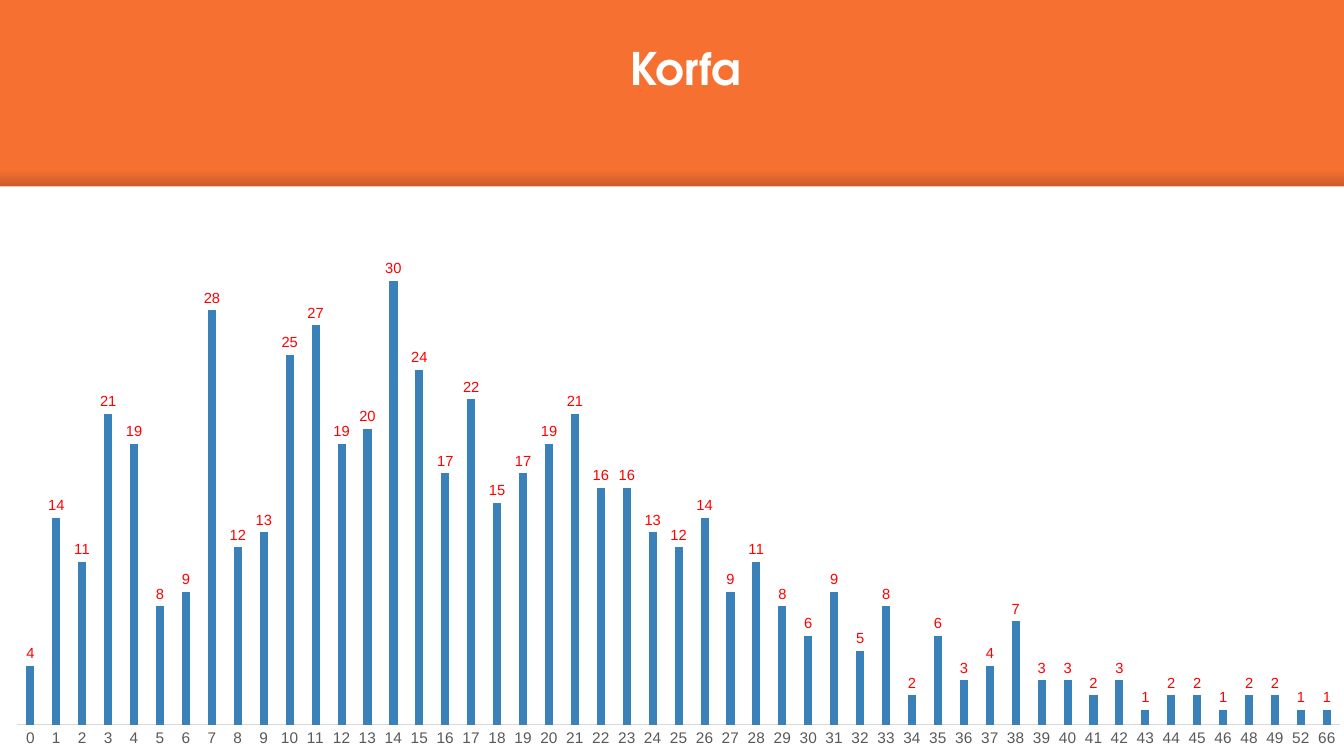
from lxml.etree import SubElement
from pptx import Presentation
from pptx.chart.data import CategoryChartData
from pptx.dml.color import RGBColor
from pptx.enum.chart import XL_CHART_TYPE as ChartType
from pptx.enum.chart import XL_LABEL_POSITION as LabelPosition
from pptx.enum.chart import XL_TICK_MARK as TickMark
from pptx.enum.shapes import MSO_SHAPE as Shape
from pptx.enum.text import MSO_ANCHOR as Anchor
from pptx.enum.text import PP_ALIGN as Align
from pptx.oxml import parse_xml
from pptx.oxml.ns import nsdecls, qn
from pptx.util import Inches, Pt

COLORS = {
    "orange": "F67031",
    "white": "FFFFFF",
    "shade": "000014",
    "bar": "3A81BA",
    "value": "FF0000",
    "category": "595959",
    "axis": "D9D9D9",
}
SCORES = [*range(47), 48, 49, 52, 66]
COUNTS = [
    4, 14, 11, 21, 19, 8, 9, 28, 12, 13, 25, 27, 19, 20, 30, 24, 17,
    22, 15, 17, 19, 21, 16, 16, 13, 12, 14, 9, 11, 8, 6, 9, 5, 8,
    2, 6, 3, 4, 7, 3, 3, 2, 3, 1, 2, 2, 1, 2, 2, 1, 1,
]
PLOT_AREA = {"x": 0.013, "y": 0.027, "w": 0.984, "h": 0.918}
WIDTH, HEIGHT = 13.33, 7.5
BAND_HEIGHT = 1.85
SHADE_HEIGHT = 0.16


class SlideBuilder:
    title_font = "TeX Gyre Adventor"
    chart_font = "Arial"

    def __init__(self, slide):
        self.slide = slide

    def color(self, key):
        return RGBColor.from_string(COLORS[key])

    def style(self, font, name, size, color, bold=False):
        font.name, font.size, font.bold = name, Pt(size), bold
        font.color.rgb = self.color(color)

    def background(self, color):
        fill = self.slide.background.fill
        fill.solid()
        fill.fore_color.rgb = self.color(color)

    def panel(self, left, top, width, height, color):
        panel = self.slide.shapes.add_shape(
            Shape.RECTANGLE, *map(Inches, (left, top, width, height)))
        panel.shadow.inherit = False
        panel.line.fill.background()
        panel.fill.solid()
        panel.fill.fore_color.rgb = self.color(color)
        return panel

    def shade(self, left, top, width, height, opacity):
        """Strip that darkens from clear at the top to the given percentage."""
        strip = self.panel(left, top, width, height, "shade")
        strip.fill.gradient()
        strip.fill.gradient_angle = 270
        for stop, alpha in zip(strip.fill.gradient_stops, (0, opacity)):
            stop.color.rgb = self.color("shade")
        tints = strip.fill._xPr.iter(qn("a:srgbClr"))
        for tint, alpha in zip(tints, (0, opacity)):
            SubElement(tint, qn("a:alpha")).set("val", str(alpha * 1000))

    def title(self, left, top, width, height, text):
        frame = self.panel(left, top, width, height, "orange").text_frame
        frame.word_wrap = True
        frame.vertical_anchor = Anchor.TOP
        frame.text = text
        heading = frame.paragraphs[0]
        heading.alignment = Align.CENTER
        self.style(heading.runs[0].font, self.title_font, 32, "white", True)

    def column_chart(self, left, top, width, height, categories, values):
        data = CategoryChartData()
        data.categories = [str(category) for category in categories]
        data.add_series("Series 1", values)
        chart = self.slide.shapes.add_chart(
            ChartType.COLUMN_CLUSTERED,
            *map(Inches, (left, top, width, height)), data).chart
        chart.has_legend = chart.has_title = False
        chart.font.name, chart.font.size = self.chart_font, Pt(10)

        columns = chart.plots[0]
        columns.gap_width, columns.overlap = 219, -27
        columns.vary_by_categories = False
        bars = columns.series[0].format.fill
        bars.solid()
        bars.fore_color.rgb = self.color("bar")

        columns.has_data_labels = True
        labels = columns.data_labels
        labels.show_value = True
        labels.position = LabelPosition.OUTSIDE_END
        self.style(labels.font, self.chart_font, 10.5, "value")

        counts = chart.value_axis
        counts.minimum_scale, counts.maximum_scale = 0, 35
        counts.has_major_gridlines = False
        counts.visible = False

        scores = chart.category_axis
        scores.major_tick_mark = scores.minor_tick_mark = TickMark.NONE
        scores.format.line.color.rgb = self.color("axis")
        scores.format.line.width = Pt(0.75)
        self.style(scores.tick_labels.font, self.chart_font, 11, "category")
        self.place_plot(chart)

    def place_plot(self, chart):
        area = chart._chartSpace.find(".//" + qn("c:plotArea"))
        for automatic in area.findall(qn("c:layout")):
            area.remove(automatic)
        modes = '<c:xMode val="edge"/><c:yMode val="edge"/>'
        sizes = "".join(f'<c:{key} val="{share}"/>'
                        for key, share in PLOT_AREA.items())
        area.insert(0, parse_xml(
            f'<c:layout {nsdecls("c")}><c:manualLayout>'
            f'<c:layoutTarget val="inner"/>{modes}{sizes}'
            '</c:manualLayout></c:layout>'))


def main():
    deck = Presentation()
    deck.slide_width, deck.slide_height = Inches(WIDTH), Inches(HEIGHT)
    builder = SlideBuilder(deck.slides.add_slide(deck.slide_layouts[6]))
    builder.background("orange")
    builder.shade(0, BAND_HEIGHT - SHADE_HEIGHT, WIDTH, SHADE_HEIGHT, 20)
    builder.panel(0, BAND_HEIGHT, WIDTH, HEIGHT - BAND_HEIGHT, "white")
    builder.column_chart(0, 1.9, WIDTH, 5.6, SCORES, COUNTS)
    builder.title(2.62, 0.35, 8.37, 1.05, "Korfa")
    deck.save("out.pptx")


if __name__ == "__main__":
    main()
